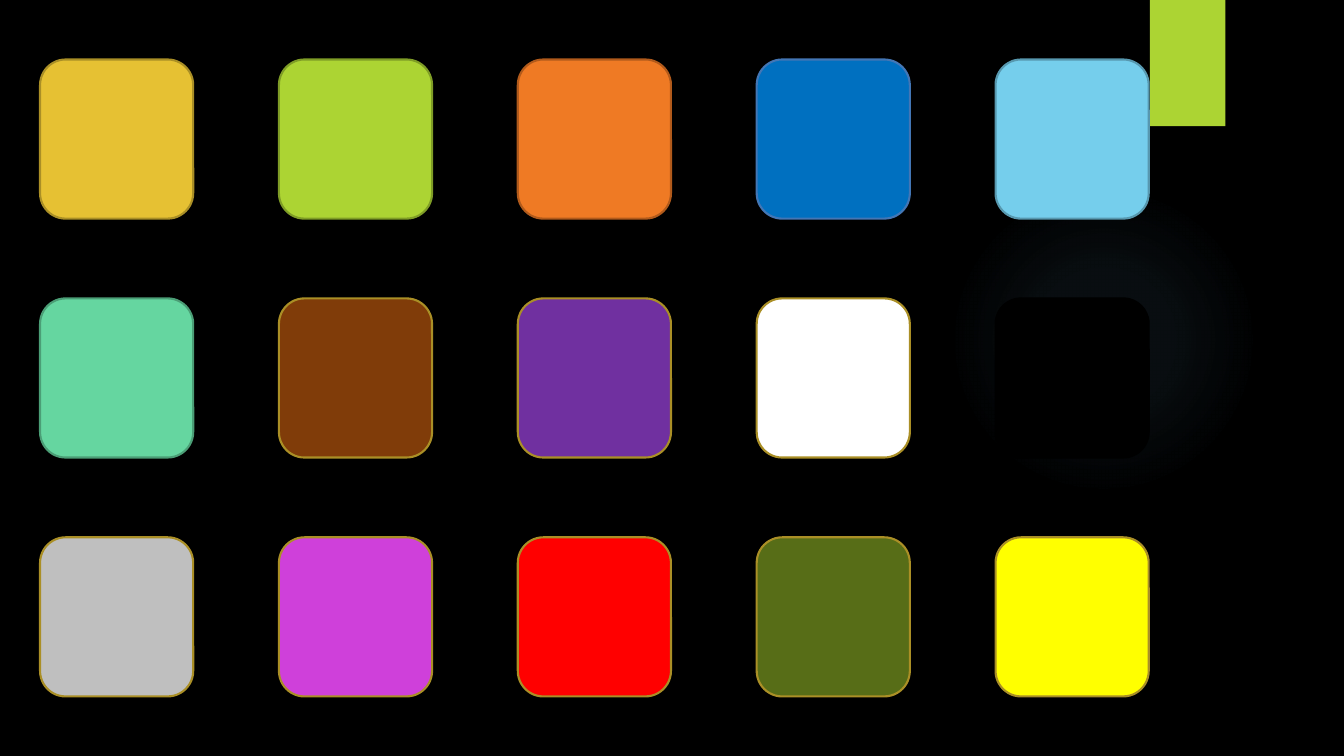
from pptx import Presentation
from pptx.dml.color import RGBColor
from pptx.enum.shapes import MSO_SHAPE as Shape
from pptx.oxml import parse_xml
from pptx.oxml.ns import nsdecls, qn
from pptx.util import Cm, Pt

GOLD = "AA8F26"
SWATCHES = [  # rows of (fill, outline)
    [("E6C133", GOLD), ("ACD433", "7F9D26"), ("EF7A24", "B15A1B"),
     ("0070C0", "4376B5"), ("75CEEC", "5798AF")],
    [("65D6A0", "4B9E76"), ("803C09", GOLD), ("7030A0", GOLD),
     ("FFFFFF", GOLD), ("000000", "000000")],
    [("BFBFBF", GOLD), ("CF40DA", GOLD), ("FF0000", GOLD),
     ("576D17", GOLD), ("FFFF00", GOLD)],
]


def rgb(color):
    return RGBColor.from_string(color)


def add_block(slide, kind, box, fill=None, line=None):
    """Add a preset shape; box is left, top, width, height in centimetres."""
    block = slide.shapes.add_shape(kind, *(Cm(length) for length in box))
    block.shadow.inherit = False
    if fill:
        block.fill.solid()
        block.fill.fore_color.rgb = rgb(fill)
    else:
        block.fill.background()
    if line:
        block.line.color.rgb = rgb(line)
        block.line.width = Pt(1.5)
    else:
        block.line.fill.background()
    return block


def add_glow(slide, box, color, stops):
    """Add a circle that fades outwards; stops are (position, opacity) percents."""
    glow = add_block(slide, Shape.OVAL, box)
    stop_xml = "".join(
        f'<a:gs pos="{position * 1000}"><a:srgbClr val="{color}">'
        f'<a:alpha val="{opacity * 1000}"/></a:srgbClr></a:gs>'
        for position, opacity in stops)
    gradient = parse_xml(
        f'<a:gradFill {nsdecls("a")} rotWithShape="1"><a:gsLst>{stop_xml}</a:gsLst>'
        '<a:path path="circle">'
        '<a:fillToRect l="50000" t="50000" r="50000" b="50000"/>'
        '</a:path></a:gradFill>')
    properties = glow.element.spPr
    properties.replace(properties.find(qn("a:noFill")), gradient)


def add_tab(slide, box, color):
    tab = add_block(slide, Shape.RECTANGLE, box, color)
    tab.element.spPr.find(qn("a:effectLst")).append(parse_xml(
        f'<a:outerShdw {nsdecls("a")} blurRad="{Pt(3)}" dist="{Pt(2)}" '
        'dir="5400000" rotWithShape="0"><a:srgbClr val="000000">'
        '<a:alpha val="45000"/></a:srgbClr></a:outerShdw>'))


def add_palette(slide, box, swatches, width=3.86, height=4.01):
    """Spread rounded swatches evenly over the box."""
    left, top, total_width, total_height = box
    column_step = (total_width - width) / (len(swatches[0]) - 1)
    row_step = (total_height - height) / (len(swatches) - 1)
    for row, colors in enumerate(swatches):
        for column, (fill, line) in enumerate(colors):
            place = (left + column * column_step, top + row * row_step, width, height)
            add_block(slide, Shape.ROUNDED_RECTANGLE, place, fill, line)


def main():
    deck = Presentation()
    deck.slide_width, deck.slide_height = Cm(33.87), Cm(19.05)
    slide = deck.slides.add_slide(deck.slide_layouts[6])
    slide.background.fill.solid()
    slide.background.fill.fore_color.rgb = rgb("000000")
    add_glow(slide, (23.9, 4.65, 7.82, 7.82), "7AC4F0", [(0, 7), (36, 6), (69, 0)])
    add_tab(slide, (28.98, 0, 1.9, 3.18), "ACD433")
    add_palette(slide, (1.01, 1.5, 27.94, 16.05), SWATCHES)
    deck.save("out.pptx")


if __name__ == "__main__":
    main()
